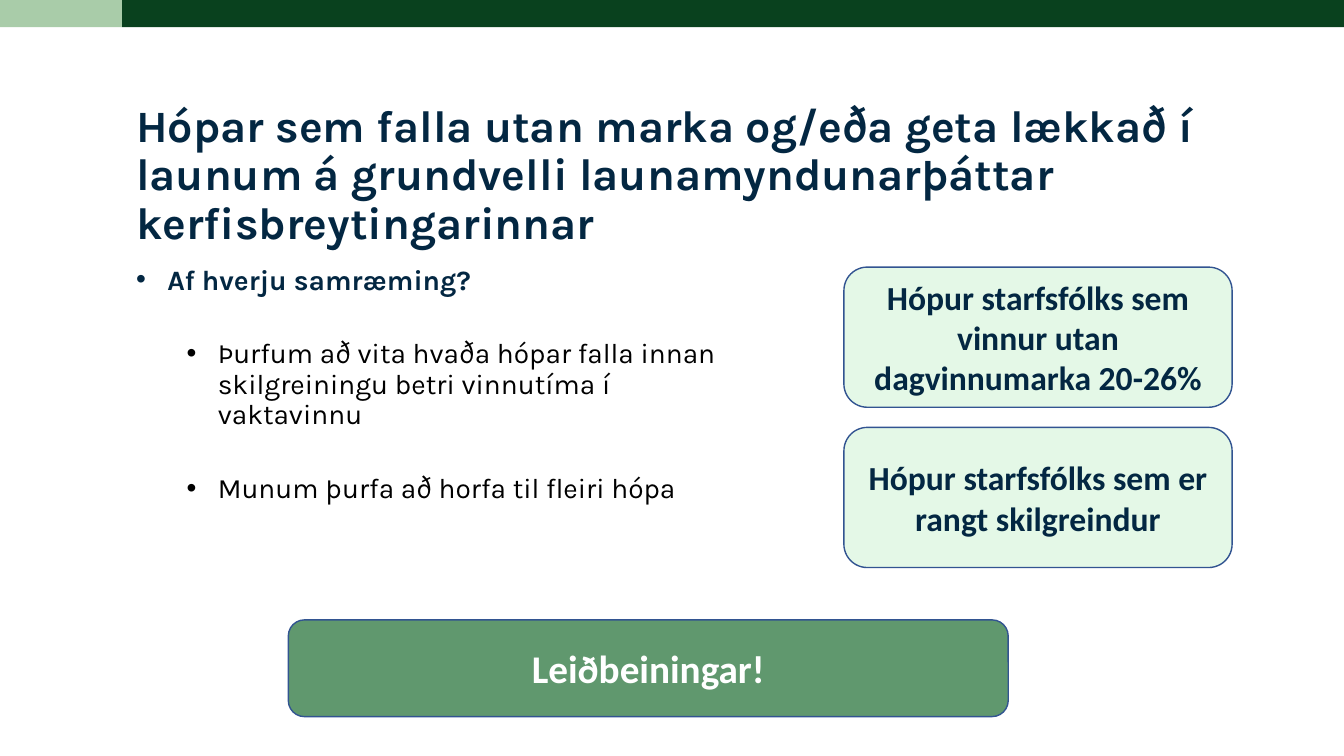
from lxml import etree
from pptx import Presentation
from pptx.dml.color import RGBColor
from pptx.enum.shapes import MSO_SHAPE
from pptx.enum.text import MSO_ANCHOR, MSO_AUTO_SIZE, PP_ALIGN
from pptx.oxml.ns import qn
from pptx.util import Inches, Pt

RECT, ROUNDED = MSO_SHAPE.RECTANGLE, MSO_SHAPE.ROUNDED_RECTANGLE
TOP, MIDDLE = MSO_ANCHOR.TOP, MSO_ANCHOR.MIDDLE
LEFT, CENTER = PP_ALIGN.LEFT, PP_ALIGN.CENTER
NO_AUTOFIT = MSO_AUTO_SIZE.NONE

NAVY, BLACK, WHITE = "032742", "000000", "FFFFFF"
DARK_GREEN, LIGHT_GREEN = "09411E", "A9CCA9"
MINT, MID_GREEN, OUTLINE = "E4F8E7", "60986E", "325491"

SLIDE_W, SLIDE_H = 13.33, 7.5
BAND_SPLIT, BAND_H = 1.21, 0.27
HEADING = ("Hópar sem falla utan marka og/eða geta lækkað í launum "
           "á grundvelli launamyndunarþáttar kerfisbreytingarinnar")
QUESTION = "Af hverju samræming?"
REASONS = [
    "Þurfum að vita hvaða hópar falla innan skilgreiningu betri vinnutíma í vaktavinnu",
    "Munum þurfa að horfa til fleiri hópa",
]
GROUPS = [
    "Hópur starfsfólks sem vinnur utan dagvinnumarka 20-26%",
    "Hópur starfsfólks sem er rangt skilgreindur",
]
GUIDANCE = "Leiðbeiningar!"
GROUP_LEFT, GROUP_TOP, GROUP_W, GROUP_H, GROUP_GAP = 8.37, 2.65, 3.85, 1.39, 0.2


def color(value):
    return RGBColor.from_string(value)


def place(item, left, top, width, height):
    item.left, item.top = Inches(left), Inches(top)
    item.width, item.height = Inches(width), Inches(height)


def write(paragraph, text, font, size, tint, bold):
    run = paragraph.add_run()
    run.text = text
    run.font.name, run.font.size, run.font.bold = font, Pt(size), bold
    run.font.color.rgb = color(tint)


def add_bullet(paragraph, indent):
    props = paragraph._p.get_or_add_pPr()
    props.set("marL", str(Inches(indent)))
    props.set("indent", str(-Inches(0.31)))
    etree.SubElement(props, qn("a:buFont")).set("typeface", "Arial")
    etree.SubElement(props, qn("a:buChar")).set("char", "•")


def add_block(kind, box, fill, outline=None):
    block = slide.shapes.add_shape(kind, *[Inches(v) for v in box])
    block.shadow.inherit = False
    block.fill.solid()
    block.fill.fore_color.rgb = color(fill)
    if outline:
        block.line.color.rgb = color(outline)
        block.line.width = Pt(1)
    else:
        block.line.fill.background()
    return block


def add_card(text, box, fill, size, tint):
    frame = add_block(ROUNDED, box, fill, OUTLINE).text_frame
    frame.word_wrap = True
    frame.vertical_anchor = MIDDLE
    frame.paragraphs[0].alignment = CENTER
    write(frame.paragraphs[0], text, "Calibri", size, tint, True)


def prepare(placeholder, box):
    place(placeholder, *box)
    frame = placeholder.text_frame
    frame.word_wrap = True
    frame.auto_size = NO_AUTOFIT
    frame.vertical_anchor = TOP
    return frame


prs = Presentation()
prs.slide_width, prs.slide_height = Inches(SLIDE_W), Inches(SLIDE_H)
slide = prs.slides.add_slide(prs.slide_layouts[1])

add_block(RECT, (BAND_SPLIT, 0, SLIDE_W - BAND_SPLIT, BAND_H), DARK_GREEN)
add_block(RECT, (0, 0, BAND_SPLIT, BAND_H), LIGHT_GREEN)

heading = prepare(slide.shapes.title, (1.25, 0.98, 11.88, 1.9)).paragraphs[0]
heading.alignment = LEFT
heading.line_spacing = 0.9
write(heading, HEADING, "Karla", 32, NAVY, True)

points = prepare(slide.placeholders[1], (1.25, 2.55, 6.13, 3.68))
question = points.paragraphs[0]
add_bullet(question, 0.31)
question.line_spacing = Pt(24)
question.space_before = Pt(0)
write(question, QUESTION, "Karla", 20, NAVY, True)
for text in REASONS:
    reason = points.add_paragraph()
    reason.level = 1
    add_bullet(reason, 0.81)
    reason.line_spacing = 0.9
    reason.space_before = Pt(31.5)
    write(reason, text, "Karla", 20, BLACK, False)

for row, text in enumerate(GROUPS):
    top = GROUP_TOP + row * (GROUP_H + GROUP_GAP)
    add_card(text, (GROUP_LEFT, top, GROUP_W, GROUP_H), MINT, 24, NAVY)
add_card(GUIDANCE, (2.86, 6.15, 7.14, 0.96), MID_GREEN, 28, WHITE)

prs.save("out.pptx")
